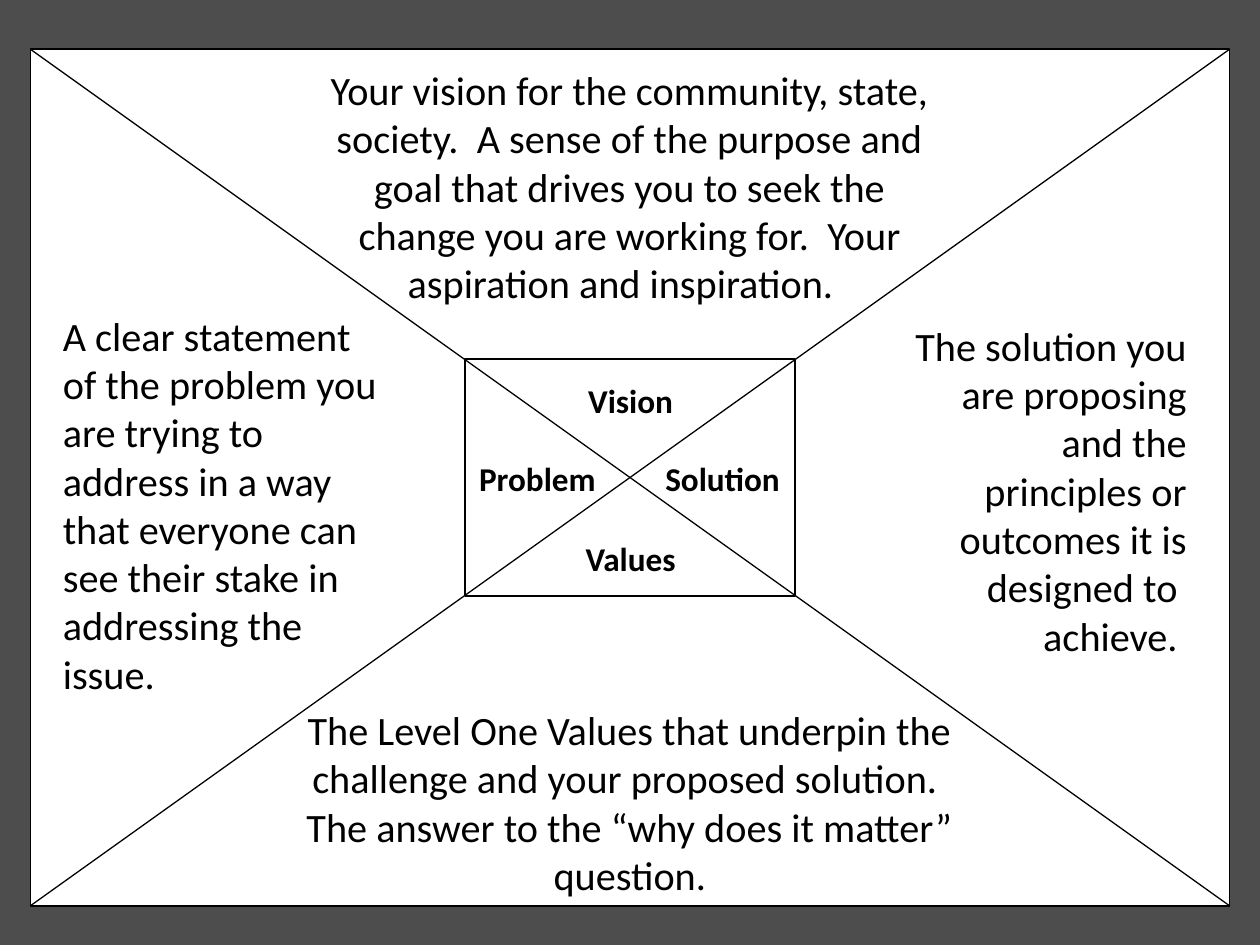
from lxml.etree import SubElement
from pptx import Presentation
from pptx.dml.color import RGBColor
from pptx.enum.shapes import MSO_CONNECTOR, MSO_SHAPE
from pptx.enum.text import PP_ALIGN
from pptx.oxml.ns import qn
from pptx.util import Inches, Pt

GREY = RGBColor(0x4D, 0x4D, 0x4D)
WHITE = RGBColor(0xFF, 0xFF, 0xFF)
BLACK = RGBColor(0x00, 0x00, 0x00)

FONT = "Calibri"
LABEL_SIZE = 19
BODY_SIZE = 23

# Outer frame edges and the concentric inner frame
LEFT, TOP, WIDTH, HEIGHT = 0.24, 0.39, 9.52, 6.8
RIGHT, BOTTOM = LEFT + WIDTH, TOP + HEIGHT
INNER_WIDTH, INNER_HEIGHT = 2.62, 1.88

# Quadrant labels: text, left, top, width, height
LABELS = [
    ("Vision", 4.17, 2.97, 1.67, 0.47),
    ("Problem", 3.61, 3.59, 1.31, 0.35),
    ("Solution", 5.08, 3.59, 1.31, 0.35),
    ("Values", 4.17, 4.22, 1.67, 0.47),
]

# Quadrant descriptions: text, left, top, width, height, alignment
DESCRIPTIONS = [
    ("Your vision for the community, state, society.  A sense of the purpose "
     "and goal that drives you to seek the change you are working for.  Your "
     "aspiration and inspiration.  ",
     2.38, 0.47, 5.24, 1.41, PP_ALIGN.CENTER),
    ("A clear statement of the problem you are trying to address in a way "
     "that everyone can see their stake in addressing the issue.",
     0.4, 2.42, 2.78, 3.36, PP_ALIGN.LEFT),
    ("The solution you are proposing and the principles or outcomes it is "
     "designed to  achieve. ",
     7.06, 2.5, 2.46, 2.11, PP_ALIGN.RIGHT),
    ("The Level One Values that underpin the challenge and your proposed "
     "solution.  The answer to the “why does it matter” question.",
     2.3, 5.55, 5.4, 1.41, PP_ALIGN.CENTER),
]


def set_line(shape):
    shape.line.color.rgb = BLACK
    shape.line.width = Pt(0.75)


def add_frame(page, width, height):
    """Add a white rectangle centred on the outer frame."""
    left = LEFT + (WIDTH - width) / 2
    top = TOP + (HEIGHT - height) / 2
    frame = page.shapes.add_shape(MSO_SHAPE.RECTANGLE, Inches(left), Inches(top),
                                  Inches(width), Inches(height))
    frame.shadow.inherit = False
    frame.fill.solid()
    frame.fill.fore_color.rgb = WHITE
    set_line(frame)


def add_diagonal(page, start_x, end_x):
    """Add a line from the bottom edge to the top edge."""
    diagonal = page.shapes.add_connector(
        MSO_CONNECTOR.STRAIGHT, Inches(start_x), Inches(BOTTOM),
        Inches(end_x), Inches(TOP))
    set_line(diagonal)
    SubElement(diagonal._element.spPr, qn("a:effectLst"))


def add_text(page, text, left, top, width, height, size,
             alignment=PP_ALIGN.CENTER, bold=False):
    box = page.shapes.add_textbox(Inches(left), Inches(top),
                                  Inches(width), Inches(height))
    box.text_frame.word_wrap = True
    para = box.text_frame.paragraphs[0]
    para.text = text
    para.alignment = alignment
    para.font.name = FONT
    para.font.size = Pt(size)
    para.font.bold = bold
    para.font.color.rgb = BLACK


def main():
    deck = Presentation()
    deck.slide_width, deck.slide_height = Inches(10), Inches(7.5)
    page = deck.slides.add_slide(deck.slide_layouts.get_by_name("Blank"))
    page.background.fill.solid()
    page.background.fill.fore_color.rgb = GREY

    # Frames and the diagonals that divide them
    add_frame(page, WIDTH, HEIGHT)
    add_frame(page, INNER_WIDTH, INNER_HEIGHT)
    add_diagonal(page, LEFT, RIGHT)
    add_diagonal(page, RIGHT, LEFT)

    # Text of the four quadrants
    for text, left, top, width, height in LABELS:
        add_text(page, text, left, top, width, height, LABEL_SIZE, bold=True)
    for text, left, top, width, height, alignment in DESCRIPTIONS:
        add_text(page, text, left, top, width, height, BODY_SIZE, alignment)

    deck.save("out.pptx")


if __name__ == "__main__":
    main()
